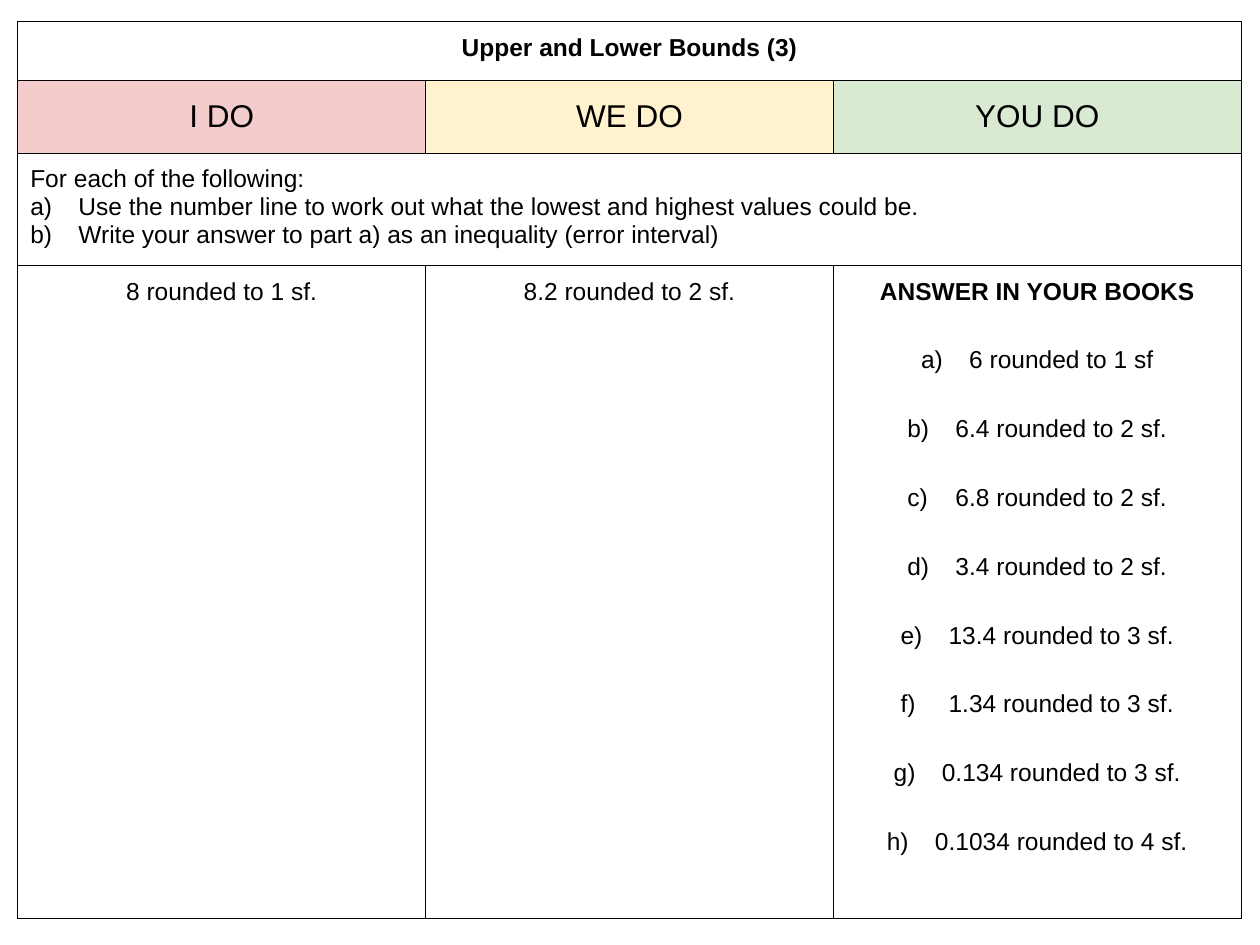
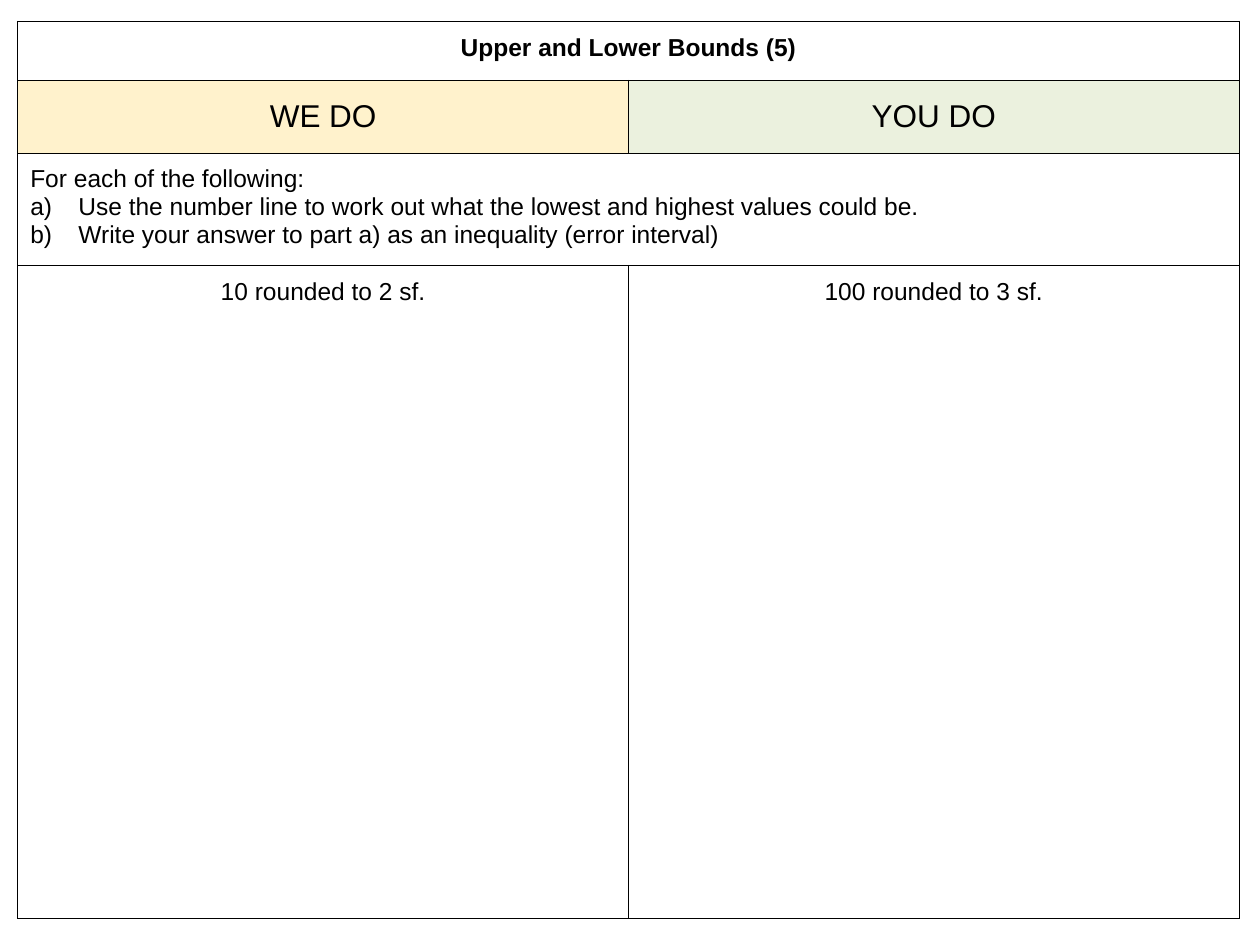
from dataclasses import dataclass

from lxml import etree
from pptx import Presentation
from pptx import util as u
from pptx.dml import color
from pptx.enum import text
from pptx.oxml import ns


@dataclass(frozen=True)
class Theme:
    font: str = "Arial"
    ink: str = "000000"
    i_do: str = "F4CCCC"
    we_do: str = "FFF2CC"
    you_do: str = "D9EAD3"
    you_do_pale: str = "EBF1DE"
    body_size: int = 14
    heading_size: int = 18
    border: float = 0.75
    margin: float = 0.25
    indent: float = 0.97


ROW_HEIGHTS = (1.19, 1.47, 2.26, 13.16)
LEFT, TOP = 0.36, 0.43
INSTRUCTIONS = (
    "For each of the following:",
    "Use the number line to work out what the lowest and highest values could be.",
    "Write your answer to part a) as an inequality (error interval)",
)
BOOK_QUESTIONS = (
    "ANSWER IN YOUR BOOKS",
    "6 rounded to 1 sf",
    "6.4 rounded to 2 sf.",
    "6.8 rounded to 2 sf.",
    "3.4 rounded to 2 sf.",
    "13.4 rounded to 3 sf.",
    "1.34 rounded to 3 sf.",
    "0.134 rounded to 3 sf.",
    "0.1034 rounded to 4 sf.",
)


class Worksheet:
    def __init__(self, deck, theme):
        self.deck = deck
        self.theme = theme
        self.slide = None

    def add_slide(self):
        self.slide = self.deck.slides.add_slide(self.deck.slide_layouts[6])

    def add_grid(self, columns, width):
        frame = self.slide.shapes.add_table(
            len(ROW_HEIGHTS), columns, u.Cm(LEFT), u.Cm(TOP),
            u.Cm(width), u.Cm(sum(ROW_HEIGHTS)))
        grid = frame.table
        grid.first_row = grid.horz_banding = False
        for column in grid.columns:
            column.width = u.Cm(width / columns)
        for row, height in zip(grid.rows, ROW_HEIGHTS):
            row.height = u.Cm(height)
        for cell in grid.iter_cells():
            self.add_borders(cell)
            cell.fill.background()
        for full_width_row in (0, 2):
            grid.cell(full_width_row, 0).merge(grid.cell(full_width_row, columns - 1))
        return grid

    def add_borders(self, cell):
        properties = cell._tc.get_or_add_tcPr()
        for side in ("lnL", "lnR", "lnT", "lnB"):
            line = etree.SubElement(properties, ns.qn(f"a:{side}"),
                                    w=str(u.Pt(self.theme.border)))
            fill = etree.SubElement(line, ns.qn("a:solidFill"))
            etree.SubElement(fill, ns.qn("a:srgbClr"), val=self.theme.ink)

    def add_numbering(self, paragraph):
        properties = paragraph._p.get_or_add_pPr()
        indent = u.Cm(self.theme.indent)
        properties.set("marL", str(indent))
        properties.set("indent", str(-indent))
        bullet_color = etree.SubElement(properties, ns.qn("a:buClr"))
        etree.SubElement(bullet_color, ns.qn("a:srgbClr"), val=self.theme.ink)
        etree.SubElement(properties, ns.qn("a:buFont"), typeface=self.theme.font)
        etree.SubElement(properties, ns.qn("a:buAutoNum"), type="alphaLcParenR")

    def add_lines(self, cell, lines, size=None, bold=False, centred=True, spacing=None):
        margin = u.Cm(self.theme.margin)
        cell.margin_left = cell.margin_right = margin
        cell.margin_top = cell.margin_bottom = margin
        cell.text_frame.text = "\n".join(lines)
        for index, paragraph in enumerate(cell.text_frame.paragraphs):
            paragraph.alignment = text.PP_ALIGN.CENTER if centred else text.PP_ALIGN.LEFT
            if index:
                if spacing:
                    paragraph.line_spacing = spacing
                self.add_numbering(paragraph)
            for run in paragraph.runs:
                run.font.name = self.theme.font
                run.font.size = u.Pt(size or self.theme.body_size)
                run.font.bold = bold and index == 0
                run.font.color.rgb = color.RGBColor.from_string(self.theme.ink)

    def add_heading(self, cell, label, tint):
        self.add_lines(cell, [label], size=self.theme.heading_size)
        cell.vertical_anchor = text.MSO_ANCHOR.MIDDLE
        cell.fill.solid()
        cell.fill.fore_color.rgb = color.RGBColor.from_string(tint)

    def add_lesson(self, title, stages, width):
        self.add_slide()
        grid = self.add_grid(len(stages), width)
        self.add_lines(grid.cell(0, 0), [title], bold=True)
        self.add_lines(grid.cell(2, 0), INSTRUCTIONS, centred=False)
        for column, (label, tint, questions) in enumerate(stages):
            self.add_heading(grid.cell(1, column), label, tint)
            self.add_lines(grid.cell(3, column), questions,
                           bold=len(questions) > 1, spacing=2.5)


def main():
    deck = Presentation()
    deck.slide_width, deck.slide_height = u.Cm(25.4), u.Cm(19.05)
    theme = Theme()
    worksheet = Worksheet(deck, theme)
    worksheet.add_lesson("Upper and Lower Bounds (3)", (
        ("I DO", theme.i_do, ["8 rounded to 1 sf."]),
        ("WE DO", theme.we_do, ["8.2 rounded to 2 sf."]),
        ("YOU DO", theme.you_do, BOOK_QUESTIONS),
    ), width=24.66)
    worksheet.add_lesson("Upper and Lower Bounds (5)", (
        ("WE DO", theme.we_do, ["10 rounded to 2 sf."]),
        ("YOU DO", theme.you_do_pale, ["100 rounded to 3 sf."]),
    ), width=24.62)
    deck.save("out.pptx")


if __name__ == "__main__":
    main()
